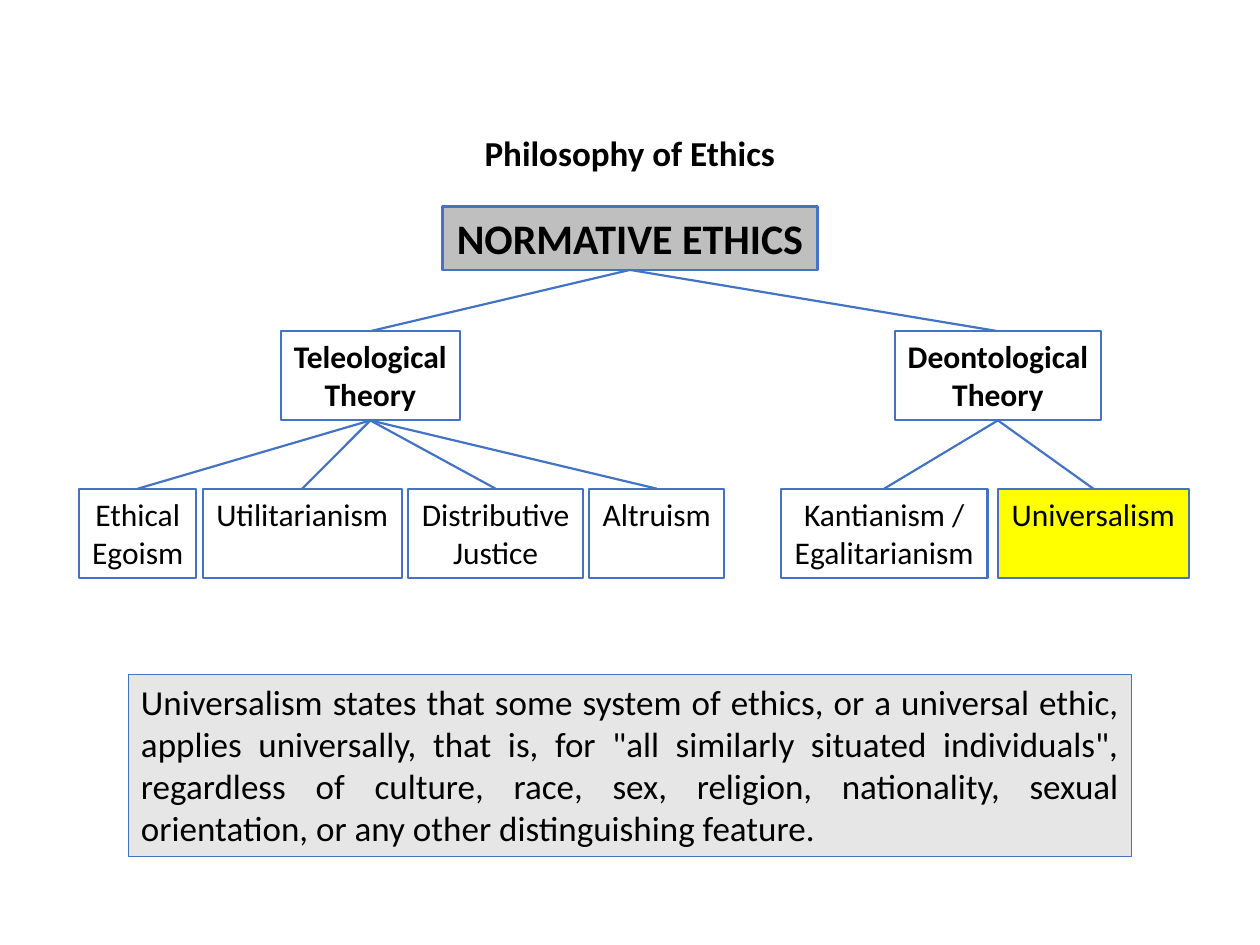
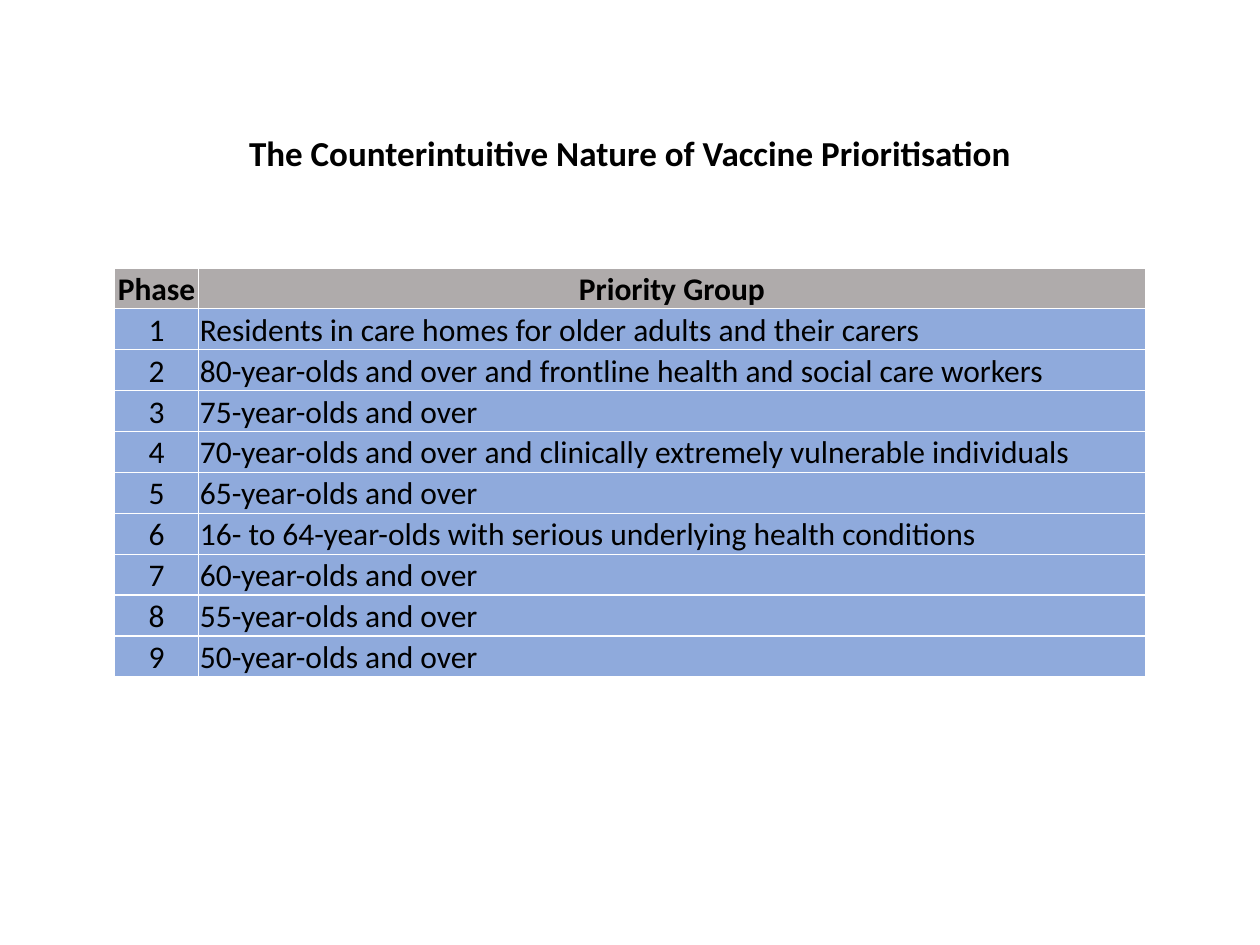
import pptx
import pptx.dml.color
import pptx.enum.shapes
import pptx.enum.text
import pptx.oxml
import pptx.oxml.ns
import pptx.util

Pt = pptx.util.Pt
ALIGN = pptx.enum.text.PP_ALIGN
ANCHOR = pptx.enum.text.MSO_ANCHOR
FONT = "Calibri"
COLORS = {
    "text": "000000",
    "white": "FFFFFF",
    "line": "4472C4",
    "root": "BFBFBF",
    "highlight": "FFFF00",
    "note": "E7E6E6",
    "header": "AFABAB",
    "row": "8FAADC",
}


def rgb(name):
    return pptx.dml.color.RGBColor.from_string(COLORS[name])


class Deck:
    def __init__(self):
        self.prs = pptx.Presentation()
        self.prs.slide_width = Pt(720)
        self.prs.slide_height = Pt(540)
        self.slide = None

    def set_text(self, tf, text, size, bold=False, align=ALIGN.CENTER):
        tf.text = text
        for p in tf.paragraphs:
            p.alignment = align
            p.font.name = FONT
            p.font.size = Pt(size)
            p.font.bold = bold
            p.font.color.rgb = rgb("text")

    def new_slide(self, title, title_height):
        self.slide = self.prs.slides.add_slide(self.prs.slide_layouts[5])
        sp = self.slide.shapes.title
        sp.left, sp.top = Pt(70), Pt(71.25)
        sp.width, sp.height = Pt(580), Pt(title_height)
        tf = sp.text_frame
        tf.auto_size = pptx.enum.text.MSO_AUTO_SIZE.NONE
        tf.vertical_anchor = ANCHOR.TOP
        self.set_text(tf, title, 20, bold=True)

    def box(self, text, left, top, width, height, fill=None, size=18,
            bold=False, align=ALIGN.CENTER, weight=1.25, wrap=False):
        sp = self.slide.shapes.add_shape(
            pptx.enum.shapes.MSO_SHAPE.RECTANGLE,
            Pt(left), Pt(top), Pt(width), Pt(height))
        sp.shadow.inherit = False
        if fill:
            sp.fill.solid()
            sp.fill.fore_color.rgb = rgb(fill)
        else:
            sp.fill.background()
        sp.line.color.rgb = rgb("line")
        sp.line.width = Pt(weight)
        tf = sp.text_frame
        tf.word_wrap = wrap
        tf.vertical_anchor = ANCHOR.TOP
        self.set_text(tf, text, size, bold, align)
        return sp

    def row_of_boxes(self, items, left, top, height, gap):
        boxes = []
        for text, width, fill in items:
            boxes.append(self.box(text, left, top, width, height, fill))
            left += width + gap
        return boxes

    def branch(self, parent, children):
        for child in children:
            cx = self.slide.shapes.add_connector(
                pptx.enum.shapes.MSO_CONNECTOR.STRAIGHT, 0, 0, 0, 0)
            cx.begin_connect(parent, 2)
            cx.end_connect(child, 0)
            cx.line.color.rgb = rgb("line")
            cx.line.width = Pt(1.25)
            cx._element.spPr.append(pptx.oxml.parse_xml(
                f'<a:effectLst {pptx.oxml.ns.nsdecls("a")}/>'))

    def cell(self, cell, text, fill, bold, align):
        cell.margin_left = cell.margin_right = cell.margin_top = Pt(0.75)
        cell.margin_bottom = 0
        cell.vertical_anchor = ANCHOR.BOTTOM
        self.set_text(cell.text_frame, text, 18, bold, align)
        tcPr = cell._tc.get_or_add_tcPr()
        for side in ("lnL", "lnR", "lnT", "lnB"):
            tcPr.append(pptx.oxml.parse_xml(
                f'<a:{side} {pptx.oxml.ns.nsdecls("a")} w="{Pt(1)}"><a:solidFill>'
                f'<a:srgbClr val="{COLORS["white"]}"/></a:solidFill></a:{side}>'))
        cell.fill.solid()
        cell.fill.fore_color.rgb = rgb(fill)

    def table(self, rows, left, top, widths, row_height):
        table = self.slide.shapes.add_table(
            len(rows), len(widths), Pt(left), Pt(top),
            Pt(sum(widths)), Pt(row_height * len(rows))).table
        for column, width in zip(table.columns, widths):
            column.width = Pt(width)
        for i, row in enumerate(rows):
            table.rows[i].height = Pt(row_height)
            header = i == 0
            for j, text in enumerate(row):
                align = ALIGN.CENTER if header or j == 0 else ALIGN.LEFT
                self.cell(table.cell(i, j), text,
                          "header" if header else "row", header, align)


def ethics_slide(deck):
    deck.new_slide("Philosophy of Ethics", 31.5)
    theory_top, school_top, height = 189.25, 279.25, 51
    root = deck.box("NORMATIVE ETHICS", 252.75, 118, 214.5, 36.25,
                    "root", size=24, bold=True, weight=1.5)
    teleological = deck.box("Teleological\nTheory", 160.5, theory_top, 102.25,
                            height, "white", bold=True)
    deontological = deck.box("Deontological\nTheory", 511.25, theory_top, 118,
                             height, "white", bold=True)
    outcome_schools = deck.row_of_boxes([
        ("Ethical\nEgoism", 67, None),
        ("Utilitarianism", 113.75, None),
        ("Distributive\nJustice", 100, None),
        ("Altruism", 77, None),
    ], 45.25, school_top, height, 3.6)
    duty_schools = deck.row_of_boxes([
        ("Kantianism /\nEgalitarianism", 118, None),
        ("Universalism", 109, "highlight"),
    ], 446.25, school_top, height, 6)
    deck.branch(root, [teleological, deontological])
    deck.branch(teleological, outcome_schools)
    deck.branch(deontological, duty_schools)
    deck.box("Universalism states that some system of ethics, or a universal "
             "ethic, applies universally, that is, for \"all similarly situated "
             "individuals\", regardless of culture, race, sex, religion, "
             "nationality, sexual orientation, or any other distinguishing "
             "feature.", 73.5, 385.25, 573, 104.25, "note", size=20,
             align=ALIGN.JUSTIFY, weight=0.75, wrap=True)


def vaccine_slide(deck):
    deck.new_slide("The Counterintuitive Nature of Vaccine Prioritisation", 55.5)
    groups = [
        "Residents in care homes for older adults and their carers",
        "80-year-olds and over and frontline health and social care workers",
        "75-year-olds and over",
        "70-year-olds and over and clinically extremely vulnerable individuals",
        "65-year-olds and over",
        "16- to 64-year-olds with serious underlying health conditions",
        "60-year-olds and over",
        "55-year-olds and over",
        "50-year-olds and over",
    ]
    rows = [("Phase", "Priority Group")]
    rows += [(str(phase), group) for phase, group in enumerate(groups, 1)]
    deck.table(rows, 65.5, 153, [48, 541], 23.4)


def main():
    deck = Deck()
    ethics_slide(deck)
    vaccine_slide(deck)
    deck.prs.save("out.pptx")


if __name__ == "__main__":
    main()
